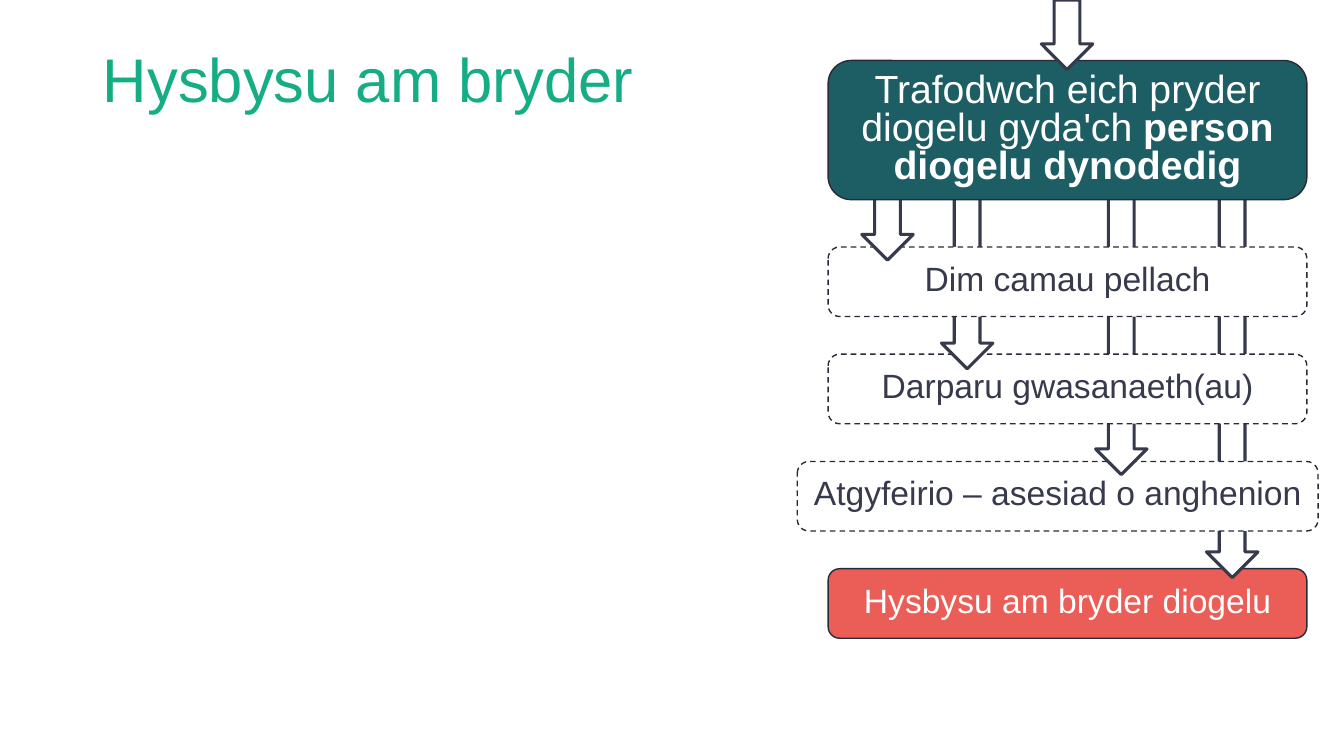
from pptx import Presentation
from pptx.dml.color import RGBColor
from pptx.enum.dml import MSO_LINE
from pptx.enum.shapes import MSO_SHAPE
from pptx.enum.text import MSO_ANCHOR, PP_ALIGN
from pptx.util import Pt

GREEN = RGBColor(0x16, 0xAD, 0x85)
TEAL = RGBColor(0x1C, 0x5E, 0x64)
CORAL = RGBColor(0xEB, 0x5E, 0x57)
WHITE = RGBColor(0xFF, 0xFF, 0xFF)
INK = RGBColor(0x37, 0x39, 0x4C)
BORDER = RGBColor(0x29, 0x2A, 0x38)

BOX_LEFT, BOX_WIDTH, BOX_HEIGHT = 591.5, 342, 49.7
FIRST_OUTCOME_TOP, OUTCOME_PITCH = 176.4, 76.6
ARROW_WIDTH = 36.7


class FlowSlide:
    font_name = "Arial"

    def __init__(self, slide):
        self.slide = slide
        self.flow = slide.shapes.add_group_shape()

    def add_text(self, frame, runs, size, color, align, spacing):
        """Fill the frame with one paragraph of (text, bold) runs."""
        frame.word_wrap = True
        frame.vertical_anchor = MSO_ANCHOR.MIDDLE
        paragraph = frame.paragraphs[0]
        paragraph.alignment = align
        paragraph.line_spacing = spacing
        for text, bold in runs:
            run = paragraph.add_run()
            run.text = text
            run.font.name = self.font_name
            run.font.size = Pt(size)
            run.font.bold = bold
            run.font.color.rgb = color

    def title(self, text, left, top, width, height):
        title = self.slide.shapes.title
        title.left, title.top = Pt(left), Pt(top)
        title.width, title.height = Pt(width), Pt(height)
        self.add_text(title.text_frame, [(text, False)], 44, GREEN, PP_ALIGN.LEFT, 0.9)

    def outline(self, preset, left, top, width, height, fill, line, weight):
        shape = self.flow.shapes.add_shape(
            preset, Pt(left), Pt(top), Pt(width), Pt(height))
        shape.shadow.inherit = False
        shape.fill.solid()
        shape.fill.fore_color.rgb = fill
        shape.line.color.rgb = line
        shape.line.width = Pt(weight)
        return shape

    def box(self, runs, left, top, width, height, fill, color, size=24):
        """Draw a rounded step; white steps get a dashed border."""
        step = self.outline(MSO_SHAPE.ROUNDED_RECTANGLE, left, top, width, height,
                            fill, BORDER, 1)
        if fill == WHITE:
            step.line.dash_style = MSO_LINE.DASH
        self.add_text(step.text_frame, runs, size, color, PP_ALIGN.CENTER, 0.8)

    def arrow(self, left, top, bottom):
        self.outline(MSO_SHAPE.DOWN_ARROW, left, top, ARROW_WIDTH, bottom - top,
                     WHITE, INK, 2.25)


def main():
    presentation = Presentation()
    presentation.slide_width, presentation.slide_height = Pt(960), Pt(540)
    page = FlowSlide(presentation.slides.add_slide(presentation.slide_layouts[5]))
    page.title("Hysbysu am bryder", 66.2, 28.8, 502.6, 59.8)

    # text, box left and width, fill, text colour, arrow left, top and bottom
    outcomes = [
        ("Dim camau pellach", BOX_LEFT, BOX_WIDTH, WHITE, INK, 615.6, 136, 185.8),
        ("Darparu gwasanaeth(au)", BOX_LEFT, BOX_WIDTH, WHITE, INK, 672.5, 132.5, 263.5),
        ("Atgyfeirio – asesiad o anghenion", 569.5, 372, WHITE, INK, 782.6, 110, 339),
        ("Hysbysu am bryder diogelu", BOX_LEFT, BOX_WIDTH, CORAL, WHITE, 861.8, 88.6, 412.6),
    ]
    # Last outcome first, so each box covers the arrows that pass behind it
    for index, outcome in reversed(list(enumerate(outcomes))):
        text, left, width, fill, color, arrow_left, arrow_top, arrow_bottom = outcome
        page.box([(text, False)], left, FIRST_OUTCOME_TOP + index * OUTCOME_PITCH,
                 width, BOX_HEIGHT, fill, color)
        page.arrow(arrow_left, arrow_top, arrow_bottom)

    page.box([("Trafodwch eich pryder diogelu gyda'ch ", False),
              ("person diogelu dynodedig", True)],
             BOX_LEFT, 43.2, BOX_WIDTH, 99.4, TEAL, WHITE, size=28)
    page.arrow(743.8, 0, 49.7)

    presentation.save("out.pptx")


if __name__ == "__main__":
    main()
